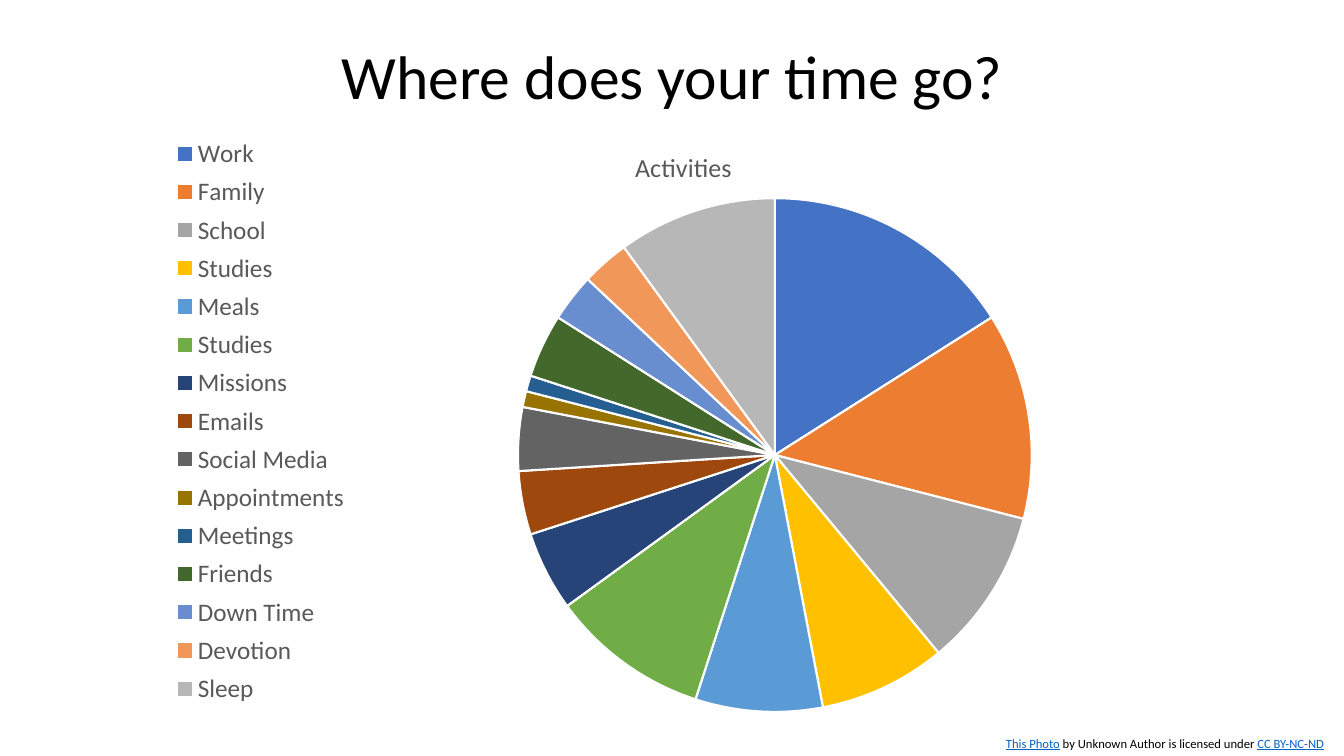
"""Build a slide with a pie chart of how time is spent."""
from lxml.etree import SubElement
from pptx import Presentation
from pptx.chart.data import CategoryChartData
from pptx.dml.color import RGBColor
from pptx.enum.chart import XL_CHART_TYPE as ChartType, XL_LEGEND_POSITION as LegendSide
from pptx.enum.text import MSO_ANCHOR as Anchor, PP_ALIGN as Align
from pptx.oxml.ns import qn
from pptx.util import Pt

FONT = "Calibri"
COLORS = {"black": "000000", "gray": "595959", "link": "0563C1", "white": "FFFFFF"}
SERIES = "Activities"
ACTIVITIES = [
    ("Work", 16, "4472C4"),
    ("Family", 13, "ED7D31"),
    ("School", 10, "A5A5A5"),
    ("Studies", 8, "FFC000"),
    ("Meals", 8, "5B9BD5"),
    ("Studies", 10, "70AD47"),
    ("Missions", 5, "264478"),
    ("Emails", 4, "9E480E"),
    ("Social Media", 4, "636363"),
    ("Appointments", 1, "997300"),
    ("Meetings", 1, "255E91"),
    ("Friends", 4, "43682B"),
    ("Down Time", 3, "698ED0"),
    ("Devotion", 3, "F1975A"),
    ("Sleep", 10, "B7B7B7"),
]
TITLE = [("Where does your time go?", "black", False)]
CREDIT = [
    ("This Photo", "link", True),
    (" by Unknown Author is licensed under ", "black", False),
    ("CC BY-NC-ND", "link", True),
]
TITLE_BOX = (93, 40, 1159, 79)
CHART_BOX = (134, 118, 1091, 608)
CREDIT_BOX = (996, 731, 840, 25)
PIE_BOX = (518, 198, 514, 514)
LEGEND_BOX = (166, 131, 190, 581)
CHART_TITLE_AT = (630, 144)


def emu(px):
    return round(px * 914400 / 100.8)


def style(font, size, color):
    font.name = FONT
    font.size = Pt(size)
    font.bold = False
    font.color.rgb = RGBColor.from_string(COLORS[color])


def add_text(page, place, runs, size):
    box = page.shapes.add_textbox(*map(emu, place))
    frame = box.text_frame
    frame.word_wrap = True
    para = frame.paragraphs[0]
    for text, color, underline in runs:
        span = para.add_run()
        span.text = text
        style(span.font, size, color)
        span.font.underline = underline
    return frame


def lay_out(part, index, place, inner=False):
    for old in part.findall(qn("c:layout")):
        part.remove(old)
    layout = SubElement(part, qn("c:layout"))
    part.insert(index, layout)
    manual = SubElement(layout, qn("c:manualLayout"))
    left, top, width, height = CHART_BOX
    fractions = [(place[0] - left) / width, (place[1] - top) / height]
    fractions += [size / whole for size, whole in zip(place[2:], (width, height))]
    settings = [("layoutTarget", "inner")] if inner else []
    settings += [("xMode", "edge"), ("yMode", "edge")]
    settings += [(key, f"{value:.3f}") for key, value in zip("xywh", fractions)]
    for key, value in settings:
        SubElement(manual, qn(f"c:{key}")).set("val", value)


def add_pie(page):
    data = CategoryChartData()
    data.categories = [name for name, _, _ in ACTIVITIES]
    data.add_series(SERIES, [share for _, share, _ in ACTIVITIES])
    chart = page.shapes.add_chart(ChartType.PIE, *map(emu, CHART_BOX), data).chart
    style(chart.font, 10, "black")

    chart.has_title = True
    span = chart.chart_title.text_frame.paragraphs[0].add_run()
    span.text = SERIES
    style(span.font, 18.6, "gray")
    chart.chart_title.include_in_layout = False

    chart.has_legend = True
    legend = chart.legend
    legend.position = LegendSide.LEFT
    legend.include_in_layout = False
    style(legend.font, 18, "gray")

    plot = chart.plots[0]
    plot.vary_by_categories = True
    for index, (_, _, color) in enumerate(ACTIVITIES):
        slice_format = plot.series[0].points[index].format
        slice_format.fill.solid()
        slice_format.fill.fore_color.rgb = RGBColor.from_string(color)
        slice_format.line.color.rgb = RGBColor.from_string(COLORS["white"])
        slice_format.line.width = Pt(1.5)

    root = chart.element.find(qn("c:chart"))
    lay_out(root.find(qn("c:title")), 1, CHART_TITLE_AT)
    lay_out(root.find(qn("c:plotArea")), 0, PIE_BOX, inner=True)
    lay_out(root.find(qn("c:legend")), 1, LEGEND_BOX)


def main():
    deck = Presentation()
    deck.slide_width, deck.slide_height = emu(1344), emu(756)
    page = deck.slides.add_slide(deck.slide_layouts[6])

    heading = add_text(page, TITLE_BOX, TITLE, 44)
    heading.vertical_anchor = Anchor.MIDDLE
    heading.paragraphs[0].alignment = Align.CENTER
    heading.paragraphs[0].line_spacing = 0.9

    add_pie(page)
    add_text(page, CREDIT_BOX, CREDIT, 9)
    deck.save("out.pptx")


if __name__ == "__main__":
    main()
